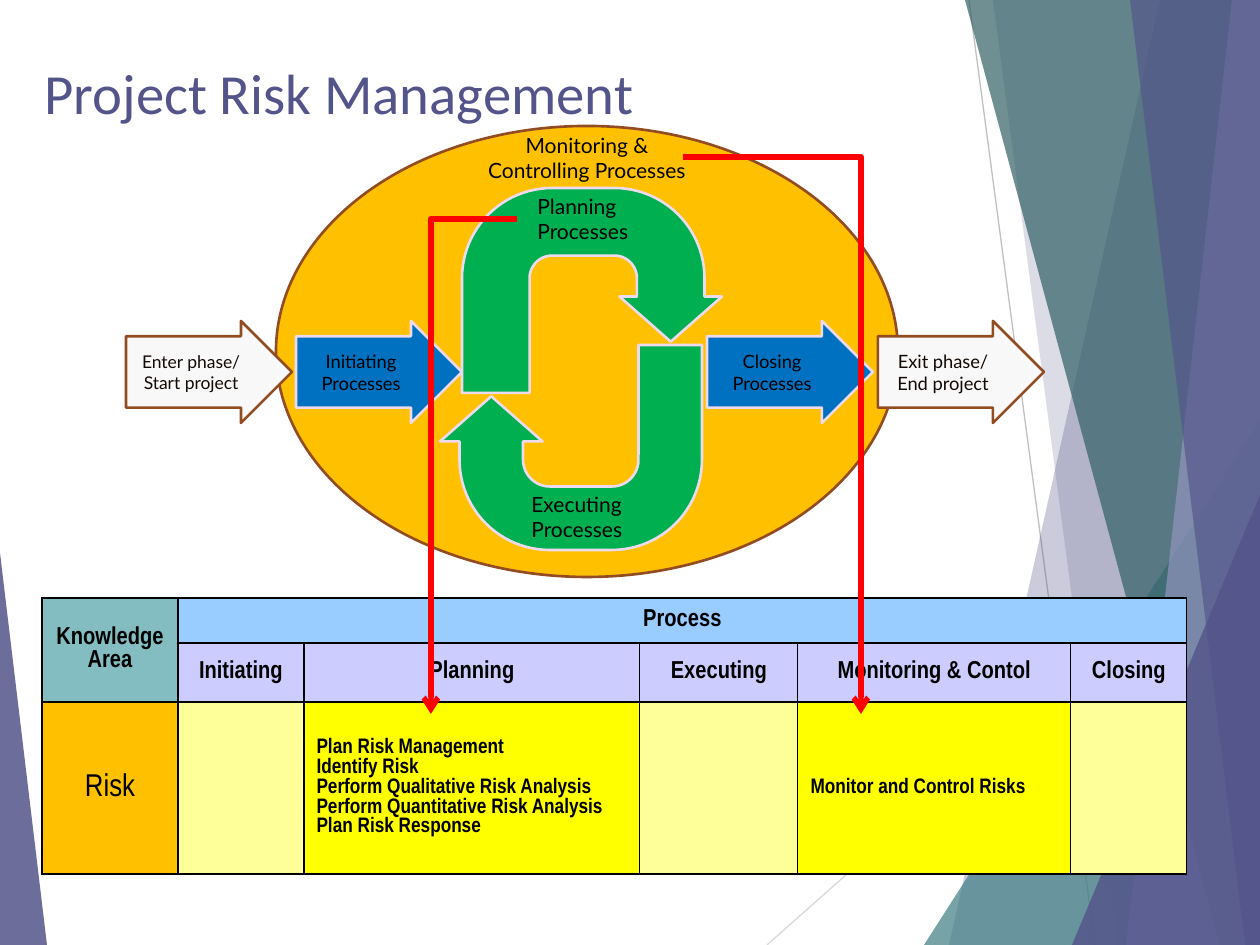
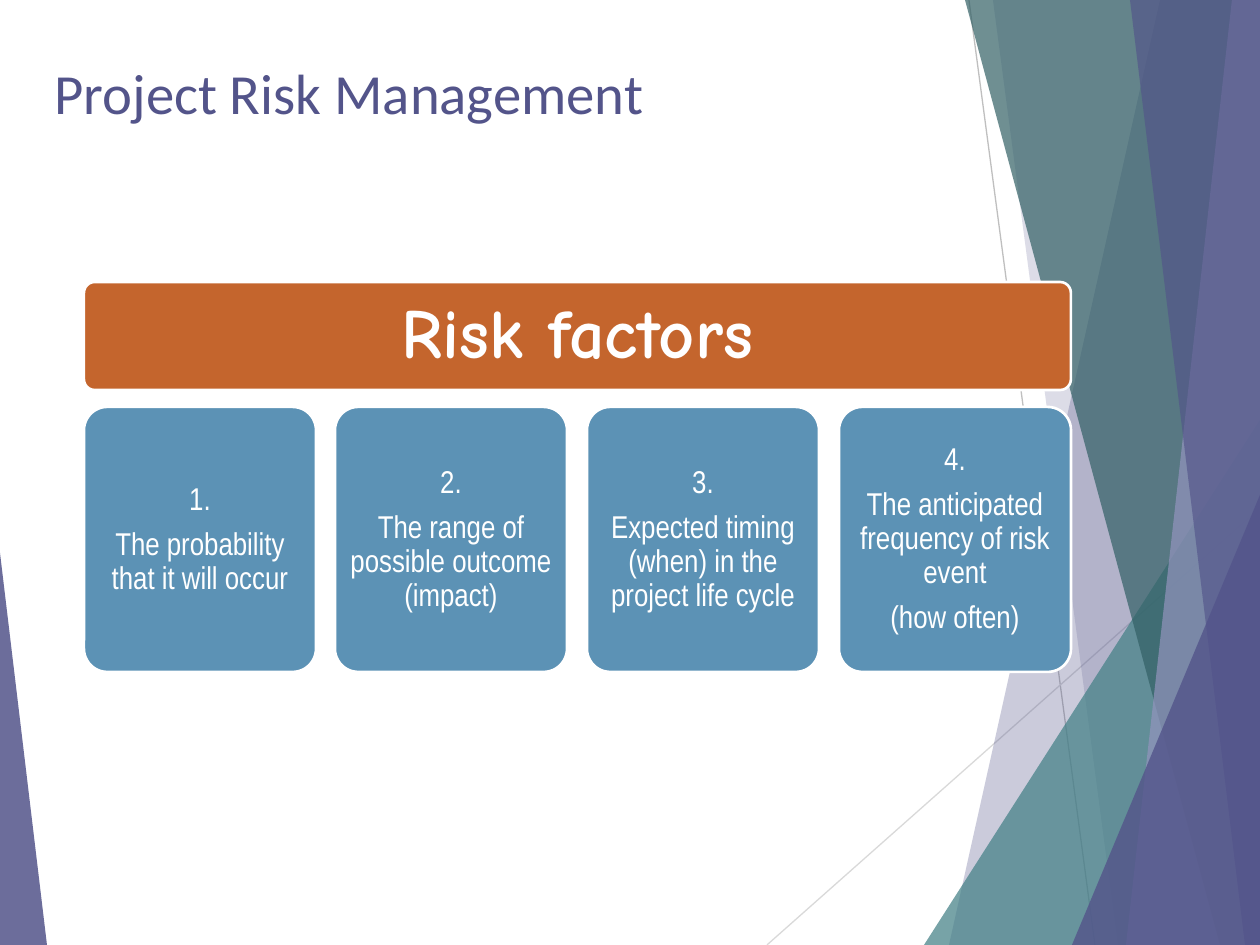
from lxml import etree
from pptx import Presentation
from pptx.dml.color import RGBColor
from pptx.enum.shapes import MSO_CONNECTOR, MSO_SHAPE
from pptx.enum.text import MSO_ANCHOR, MSO_AUTO_SIZE, PP_ALIGN
from pptx.oxml.ns import qn
from pptx.util import Inches, Pt

PX = 7257
LEFT, CENTER = PP_ALIGN.LEFT, PP_ALIGN.CENTER
TOP, MIDDLE = MSO_ANCHOR.TOP, MSO_ANCHOR.MIDDLE
ELLIPSE, ROUNDED = MSO_SHAPE.OVAL, MSO_SHAPE.ROUNDED_RECTANGLE
ARROW, UTURN = MSO_SHAPE.RIGHT_ARROW, MSO_SHAPE.U_TURN_ARROW
TRIANGLE = MSO_SHAPE.ISOSCELES_TRIANGLE
STRAIGHT, ELBOW = MSO_CONNECTOR.STRAIGHT, MSO_CONNECTOR.ELBOW
TITLE_FONT, FLOW_FONT = "Calibri", "Lato"
TABLE_FONT, HEADER_FONT = "Arial Narrow", "Comic Neue"

C = {
    "purple": "53548A", "lilac": "9394BE", "teal": "438086", "dark teal": "326065",
    "grey": "BFBFBF", "light grey": "D9D9D9", "white": "FFFFFF", "black": "000000",
    "brown": "934C22", "ink": "140A05", "paper": "F8F8F8", "pale pink": "EDDAEE",
    "amber": "FFC000", "blue": "0070C0", "green": "00B050", "red": "FF0000",
    "area": "83BCC1", "process": "99CCFF", "group": "CCCCFF",
    "pale yellow": "FFFF99", "yellow": "FFFF00",
    "orange": "C4652D", "steel": "5C92B5",
}


def paint(sp, fill, line=None):
    sp.shadow.inherit = False
    sp.fill.solid()
    sp.fill.fore_color.rgb = RGBColor.from_string(C[fill])
    if line:
        sp.line.color.rgb = RGBColor.from_string(C[line])
        sp.line.width = Pt(1.5)
    else:
        sp.line.fill.background()


def write(tf, lines, size, font, color, bold=False, align=CENTER, spacing=None, after=0):
    for i, line in enumerate(lines):
        p = tf.paragraphs[0] if i == 0 else tf.add_paragraph()
        p.alignment = align
        p.line_spacing = spacing
        p.space_before = Pt(0)
        p.space_after = Pt(after)
        r = p.add_run()
        r.text = line
        r.font.size = Pt(size)
        r.font.name = font
        r.font.bold = bold
        r.font.color.rgb = RGBColor.from_string(C[color])


prs = Presentation()
prs.slide_width, prs.slide_height = Inches(10), Inches(7.5)
layout = prs.slide_layouts[5]
slides = [prs.slides.add_slide(layout) for _ in range(2)]

for s, left in zip(slides, (32, 42)):
    title = s.shapes.title
    title.left, title.top, title.width, title.height = left * PX, 52 * PX, 1050 * PX, 63 * PX
    tf = title.text_frame
    tf.auto_size = MSO_AUTO_SIZE.NONE
    tf.vertical_anchor = TOP
    write(tf, ["Project Risk Management"], 32.4, TITLE_FONT, "purple", align=LEFT)

s = slides[0]
backdrop = []
for x1, y1, x2, y2, color in [(969, 0, 1095, 945, "grey"), (1260, 508, 767, 945, "light grey")]:
    cn = s.shapes.add_connector(STRAIGHT, x1 * PX, y1 * PX, x2 * PX, y2 * PX)
    cn.line.color.rgb = RGBColor.from_string(C[color])
    cn.line.width = Pt(0.75)
    etree.SubElement(cn.element.spPr, qn("a:effectLst"))
    backdrop.append(cn)

facets = [
    ("band", (1160, 949), "purple", 30),
    ("band", (993, 1118), "purple", 20),
    ("triangle", (924, 420, 336, 525, 1), "teal", 72),
    ("band", (965, 1220), "dark teal", 70),
    ("band", (1232, 1126), "lilac", 70),
    ("band", (1130, 1245), "purple", 65),
    ("triangle", (1072, 495, 188, 450, 1), "purple", 80),
    ("triangle", (0, 553, 47, 392, 0), "purple", 85),
]
for kind, geometry, color, alpha in facets:
    if kind == "band":
        top_x, bottom_x = geometry
        fb = s.shapes.build_freeform(top_x, 0, scale=PX)
        fb.add_line_segments([(1260, 0), (1260, 945), (bottom_x, 945)], close=True)
        sp = fb.convert_to_shape()
    else:
        x, y, w, h, apex = geometry
        sp = s.shapes.add_shape(TRIANGLE, x * PX, y * PX, w * PX, h * PX)
        sp.adjustments[0] = apex
    paint(sp, color)
    clr = sp.element.spPr.find(".//" + qn("a:srgbClr"))
    etree.SubElement(clr, qn("a:alpha"), val=str(alpha * 1000))
    backdrop.append(sp)
for i, sp in enumerate(backdrop):
    layout.shapes.element.insert(2 + i, sp.element)

col_widths = [136, 126, 336, 158, 273, 116]
row_heights = [45, 59, 172]
table = s.shapes.add_table(3, 6, 42 * PX, 598 * PX, sum(col_widths) * PX, sum(row_heights) * PX).table
table.first_row = table.horz_banding = False
for col, w in zip(table.columns, col_widths):
    col.width = w * PX
for row, h in zip(table.rows, row_heights):
    row.height = h * PX
table.cell(0, 0).merge(table.cell(1, 0))
table.cell(0, 1).merge(table.cell(0, 5))

groups = ["Initiating", "Planning", "Executing", "Monitoring & Contol", "Closing"]
planning = ["Plan Risk Management", "Identify Risk", "Perform Qualitative Risk Analysis",
            "Perform Quantitative Risk Analysis", "Plan Risk Response"]
heading = dict(size=14, bold=True, align=CENTER)
entry = dict(size=12, bold=True, align=LEFT)
cells = [
    [(["Knowledge Area"], "area", heading), (["Process"], "process", heading)]
    + [([], "process", heading)] * 4,
    [([], "area", heading)] + [([g], "group", heading) for g in groups],
    [(["Risk"], "amber", dict(size=18)), ([], "pale yellow", entry), (planning, "yellow", entry),
     ([], "pale yellow", entry), (["Monitor and Control Risks"], "yellow", entry),
     ([], "pale yellow", entry)],
]
for i, row in enumerate(cells):
    for j, (lines, fill, style) in enumerate(row):
        cell = table.cell(i, j)
        cell.vertical_anchor = MIDDLE
        tcPr = cell._tc.get_or_add_tcPr()
        for side in ("a:lnL", "a:lnR", "a:lnT", "a:lnB"):
            ln = etree.SubElement(tcPr, qn(side), w=str(Pt(0.75)))
            solid = etree.SubElement(ln, qn("a:solidFill"))
            etree.SubElement(solid, qn("a:srgbClr"), val=C["black"])
        cell.fill.solid()
        cell.fill.fore_color.rgb = RGBColor.from_string(C[fill])
        write(cell.text_frame, lines, font=TABLE_FONT, color="black", spacing=1.0, **style)

sp = s.shapes.add_shape(ELLIPSE, 276 * PX, 126 * PX, 622 * PX, 451 * PX)
paint(sp, "amber", "brown")

steps = [
    (126, ["Enter phase/", "Start project"], 10, "paper", "brown", "ink"),
    (878, ["Exit phase/", "End project"], 10.5, "paper", "brown", "ink"),
    (296, ["Initiating", "Processes"], 10.5, "blue", "pale pink", "black"),
    (707, ["Closing", "Processes"], 10.5, "blue", "pale pink", "black"),
]
for x, lines, size, fill, line, color in steps:
    sp = s.shapes.add_shape(ARROW, x * PX, 321 * PX, 166 * PX, 102 * PX)
    sp.adjustments[0], sp.adjustments[1] = 0.7, 0.5
    paint(sp, fill, line)
    tf = sp.text_frame
    tf.margin_left = tf.margin_right = tf.margin_top = tf.margin_bottom = 0
    tf.vertical_anchor = MIDDLE
    write(tf, lines, size, FLOW_FONT, color)

for x, y, w, h, rotation, thickness in [(462, 188, 260, 205, 0, 0.33), (440, 345, 262, 205, 180, 0.31)]:
    sp = s.shapes.add_shape(UTURN, x * PX, y * PX, w * PX, h * PX)
    sp.rotation = rotation
    for i, value in enumerate((thickness, 0.25, 0.22, 0.44, 0.75)):
        sp.adjustments[i] = value
    paint(sp, "green", "pale pink")

labels = [
    (525, 187, 135, ["Planning", "Processes"], LEFT),
    (519, 485, 135, ["Executing", "Processes"], LEFT),
    (462, 126, 250, ["Monitoring &", "Controlling Processes"], CENTER),
]
for x, y, w, lines, align in labels:
    tf = s.shapes.add_textbox(x * PX, y * PX, w * PX, 62 * PX).text_frame
    tf.word_wrap = True
    write(tf, lines, 12, FLOW_FONT, "black", align=align)

for x1, y1, x2, y2 in [(517, 219, 431, 714), (683, 157, 861, 714)]:
    cn = s.shapes.add_connector(ELBOW, x1 * PX, y1 * PX, x2 * PX, y2 * PX)
    cn.element.spPr.find(qn("a:prstGeom")).set("prst", "bentConnector2")
    cn.line.color.rgb = RGBColor.from_string(C["red"])
    cn.line.width = Pt(3)
    etree.SubElement(cn.line._get_or_add_ln(), qn("a:tailEnd"), type="arrow")
    etree.SubElement(cn.element.spPr, qn("a:effectLst"))

s = slides[1]
factors = [
    ["1.", "The probability that it will occur"],
    ["2.", "The range of possible outcome (impact)"],
    ["3.", "Expected timing (when) in the project life cycle"],
    ["4.", "The anticipated frequency of risk event", "(how often)"],
]
left, total_w, card_w = 84, 987, 232
panels = [(left, 282, total_w, 108, "orange", 21, ["Risk factors"], 40, HEADER_FONT, True)]
for i, lines in enumerate(factors):
    x = left + i * (total_w - card_w) // 3
    panels.append((x, 407, card_w, 265, "steel", 7, lines, 18, TABLE_FONT, False))
for x, y, w, h, fill, inset, lines, size, font, bold in panels:
    sp = s.shapes.add_shape(ROUNDED, x * PX, y * PX, w * PX, h * PX)
    sp.adjustments[0] = 0.1
    paint(sp, fill, "white")
    tf = sp.text_frame
    tf.margin_left = tf.margin_right = tf.margin_top = tf.margin_bottom = inset * PX
    tf.vertical_anchor = MIDDLE
    write(tf, lines, size, font, "white", bold, spacing=0.9, after=size * 0.35)

prs.save("out.pptx")
